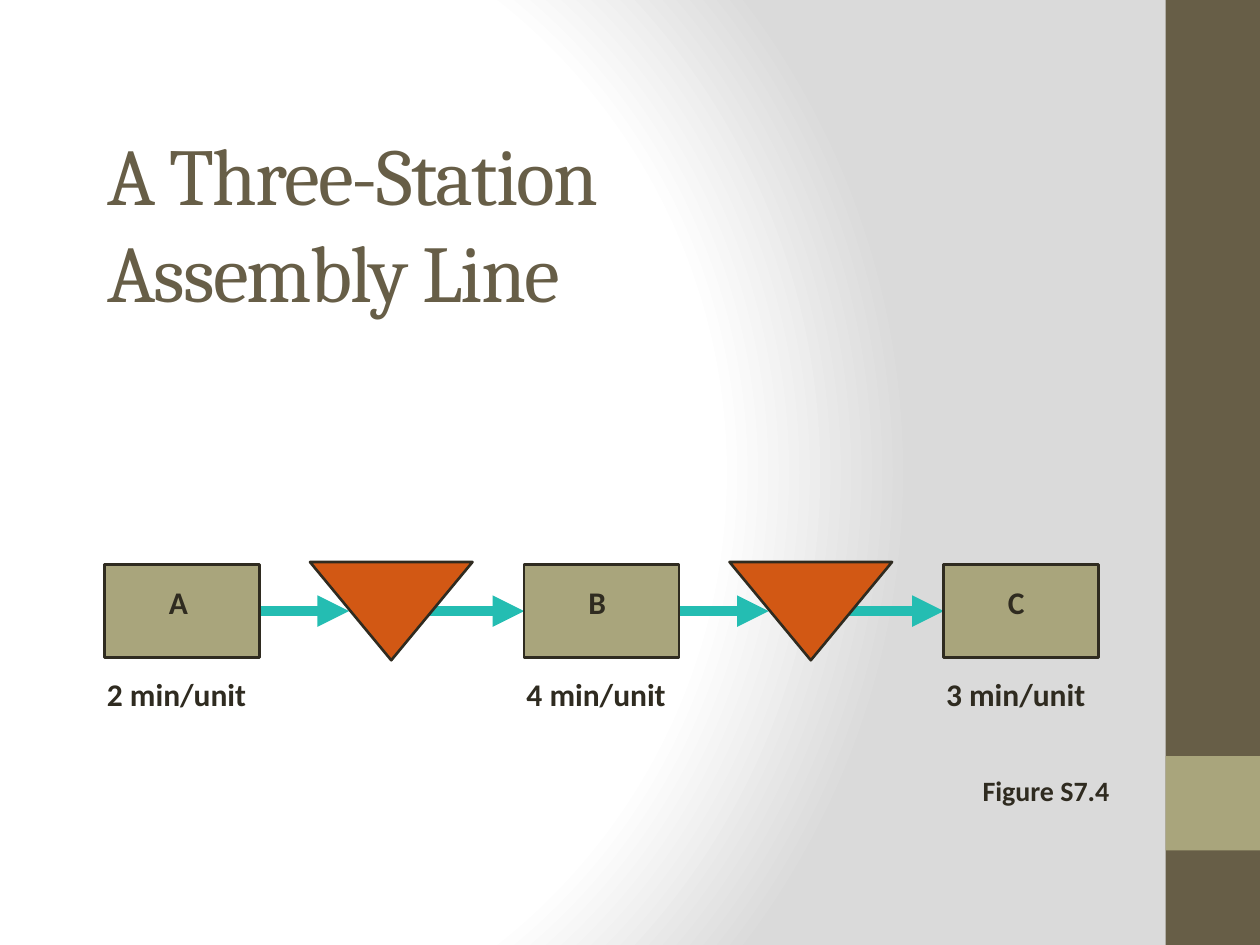
from lxml.etree import SubElement
from pptx import Presentation
from pptx.dml.color import RGBColor
from pptx.enum.shapes import MSO_CONNECTOR, MSO_SHAPE
from pptx.enum.text import MSO_ANCHOR, MSO_AUTO_SIZE, PP_ALIGN
from pptx.oxml import parse_xml
from pptx.oxml.ns import qn
from pptx.util import Inches, Pt

BROWN = RGBColor(0x67, 0x5E, 0x47)
OLIVE = RGBColor(0xA9, 0xA5, 0x7C)
DARK = RGBColor(0x2F, 0x2B, 0x20)
TEAL = RGBColor(0x24, 0xBD, 0xB2)
ORANGE = RGBColor(0xD2, 0x58, 0x14)

TITLE = "A Three-Station Assembly Line"
FIGURE = "Figure S7.4"
STATIONS = [("A", "2 min/unit"), ("B", "4 min/unit"), ("C", "3 min/unit")]

PITCH = 3.33
STATION_LEFT, LABEL_LEFT, BUFFER_LEFT = 0.83, 0.75, 2.46
ARROW_LEFTS = [1.91, 3.3]
ARROW_LENGTH = 0.86
ARROW_Y = 4.85

BACKGROUND = """
<a:gradFill xmlns:a="http://schemas.openxmlformats.org/drawingml/2006/main" rotWithShape="1">
  <a:gsLst>
    <a:gs pos="0"><a:srgbClr val="FFFFFF"/></a:gs>
    <a:gs pos="75000"><a:srgbClr val="FFFFFF"/></a:gs>
    <a:gs pos="100000"><a:srgbClr val="DADADA"/></a:gs>
  </a:gsLst>
  <a:path path="circle"><a:fillToRect l="20000" t="50000" r="100000" b="50000"/></a:path>
</a:gradFill>
"""


def set_background(slide):
    slide.background.fill.gradient()
    gradient = next(slide.element.iter(qn("a:gradFill")))
    gradient.getparent().replace(gradient, parse_xml(BACKGROUND))


def add_text(frame, text, size, color=DARK, font="Calibri", bold=True):
    paragraph = frame.paragraphs[0]
    paragraph.alignment = PP_ALIGN.LEFT
    run = paragraph.add_run()
    run.text = text
    run.font.name = font
    run.font.size = Pt(size)
    run.font.bold = bold
    run.font.color.rgb = color
    return run


def add_title(slide):
    title = slide.shapes.title
    title.left, title.top = Inches(0.75), Inches(0.86)
    title.width, title.height = Inches(5.44), Inches(1.8)
    frame = title.text_frame
    frame.auto_size = MSO_AUTO_SIZE.NONE
    frame.word_wrap = True
    frame.vertical_anchor = MSO_ANCHOR.MIDDLE
    run = add_text(frame, TITLE, 46, BROWN, "Cambria", False)
    run.font._element.set("spc", "-100")


def add_label(slide, text, left, top, width, height, size):
    box = slide.shapes.add_textbox(
        Inches(left), Inches(top), Inches(width), Inches(height))
    box.text_frame.word_wrap = False
    add_text(box.text_frame, text, size)


def add_block(slide, kind, left, top, width, height, fill, outlined=True):
    shape = slide.shapes.add_shape(
        kind, Inches(left), Inches(top), Inches(width), Inches(height))
    shape.shadow.inherit = False
    shape.fill.solid()
    shape.fill.fore_color.rgb = fill
    if outlined:
        shape.line.color.rgb = DARK
        shape.line.width = Pt(1.5)
    else:
        shape.line.fill.background()
    return shape


def add_arrow(slide, left):
    arrow = slide.shapes.add_connector(
        MSO_CONNECTOR.STRAIGHT, Inches(left), Inches(ARROW_Y),
        Inches(left + ARROW_LENGTH), Inches(ARROW_Y))
    arrow.line.color.rgb = TEAL
    arrow.line.width = Pt(6)
    SubElement(arrow.line._get_or_add_ln(), qn("a:tailEnd"), type="triangle")
    SubElement(arrow._element.spPr, qn("a:effectLst"))


def add_station(slide, name, left):
    station = add_block(slide, MSO_SHAPE.RECTANGLE, left, 4.48, 1.23, 0.74, OLIVE)
    frame = station.text_frame
    frame.word_wrap = False
    frame.vertical_anchor = MSO_ANCHOR.TOP
    frame.margin_left = frame.margin_right = Inches(0.51)
    frame.margin_top = frame.margin_bottom = Inches(0.15)
    add_text(frame, name, 18)


def main():
    presentation = Presentation()
    presentation.slide_width, presentation.slide_height = Inches(10), Inches(7.5)
    slide = presentation.slides.add_slide(presentation.slide_layouts[5])
    set_background(slide)
    add_block(slide, MSO_SHAPE.RECTANGLE, 9.25, 0, 0.75, 7.5, BROWN, False)
    add_block(slide, MSO_SHAPE.RECTANGLE, 9.25, 6, 0.75, 0.75, OLIVE, False)
    add_title(slide)
    add_label(slide, FIGURE, 7.7, 6.09, 1.4, 0.37, 16)

    offsets = [index * PITCH for index in range(len(STATIONS))]
    for offset in offsets[:-1]:
        for left in ARROW_LEFTS:
            add_arrow(slide, left + offset)
    for (name, duration), offset in zip(STATIONS, offsets):
        add_station(slide, name, STATION_LEFT + offset)
        add_label(slide, duration, LABEL_LEFT + offset, 5.31, 1.38, 0.4, 18)
    for offset in offsets[:-1]:
        buffer = add_block(slide, MSO_SHAPE.ISOSCELES_TRIANGLE,
                           BUFFER_LEFT + offset, 4.46, 1.29, 0.78, ORANGE)
        buffer.rotation = 180
    presentation.save("out.pptx")


if __name__ == "__main__":
    main()
